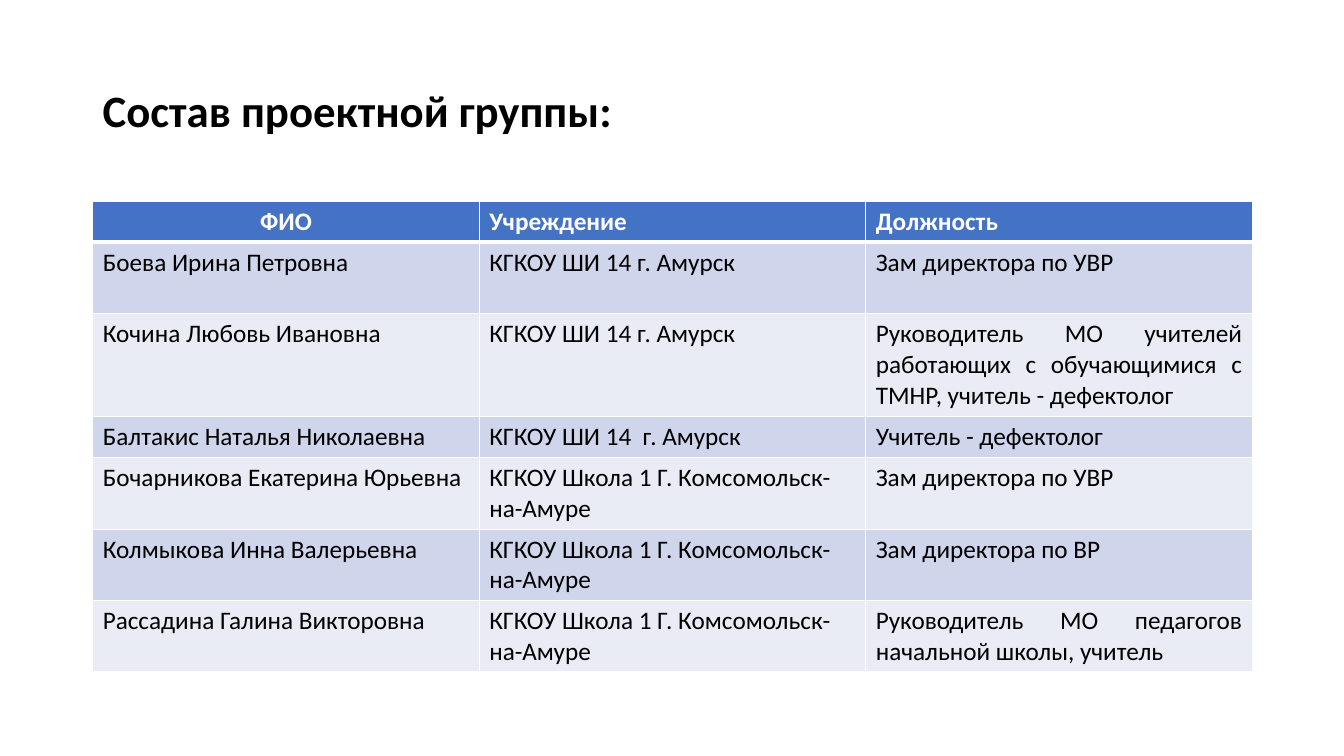
"""Build the slide that lists the members of the project group."""
from lxml.etree import SubElement
from pptx import Presentation
from pptx.dml.color import RGBColor
from pptx.enum.text import MSO_ANCHOR, PP_ALIGN
from pptx.oxml.ns import qn
from pptx.util import Inches, Pt

TITLE = "Состав проектной группы:"
HEADER = ("ФИО", "Учреждение", "Должность")
AMURSK = "КГКОУ ШИ 14 г. Амурск"
KOMSOMOLSK = "КГКОУ Школа 1 Г. Комсомольск-на-Амуре"
MEMBERS = [
    ("Боева Ирина Петровна", AMURSK, "Зам директора по УВР"),
    ("Кочина Любовь Ивановна", AMURSK,
     "Руководитель МО учителей работающих с обучающимися с ТМНР, учитель - дефектолог"),
    ("Балтакис Наталья Николаевна", "КГКОУ ШИ 14  г. Амурск", "Учитель - дефектолог"),
    ("Бочарникова Екатерина Юрьевна", KOMSOMOLSK, "Зам директора по УВР"),
    ("Колмыкова Инна Валерьевна", KOMSOMOLSK, "Зам директора по ВР"),
    ("Рассадина Галина Викторовна", KOMSOMOLSK,
     "Руководитель МО педагогов начальной школы, учитель"),
]
ROW_HEIGHTS = (0.4, 0.71, 1.02, 0.41, 0.71, 0.71, 0.7)
ALIGNMENTS = {(0, 0): PP_ALIGN.CENTER, (2, 2): PP_ALIGN.JUSTIFY, (6, 2): PP_ALIGN.JUSTIFY}
BLACK, WHITE, BLUE = "000000", "FFFFFF", "4472C4"
BANDS = ("E9EBF5", "CFD5EA")
LEFT, TABLE_TOP, TABLE_WIDTH = 0.92, 2, 11.5


def color(value):
    return RGBColor.from_string(value)


def write(tf, text, size, value, bold):
    tf.text = text
    p = tf.paragraphs[0]
    font = p.runs[0].font
    font.name, font.size, font.bold = "Calibri", Pt(size), bold
    font.color.rgb = color(value)
    return p


def add_borders(cell, header_below, is_header):
    widths = {"L": 1, "R": 1, "T": 3 if header_below else 1, "B": 3 if is_header else 1}
    for side, width in widths.items():
        line = SubElement(cell._tc.get_or_add_tcPr(), qn(f"a:ln{side}"), w=str(Pt(width)))
        fill = SubElement(line, qn("a:solidFill"))
        SubElement(fill, qn("a:srgbClr"), val=WHITE)


def add_title(s):
    tf = s.shapes.add_textbox(Inches(LEFT), Inches(0.4), Inches(10.39), Inches(1.45)).text_frame
    tf.word_wrap = True
    tf.vertical_anchor = MSO_ANCHOR.MIDDLE
    write(tf, TITLE, 32, BLACK, True).line_spacing = 0.9


def add_members(s):
    rows = [HEADER, *MEMBERS]
    table = s.shapes.add_table(len(rows), len(HEADER), Inches(LEFT), Inches(TABLE_TOP),
                               Inches(TABLE_WIDTH), Inches(sum(ROW_HEIGHTS))).table
    for i, (texts, height) in enumerate(zip(rows, ROW_HEIGHTS)):
        table.rows[i].height = Inches(height)
        is_header = i == 0
        for j, text in enumerate(texts):
            cell = table.cell(i, j)
            add_borders(cell, i == 1, is_header)
            cell.fill.solid()
            cell.fill.fore_color.rgb = color(BLUE if is_header else BANDS[i % 2])
            p = write(cell.text_frame, text, 18, WHITE if is_header else BLACK, is_header)
            p.alignment = ALIGNMENTS.get((i, j))


def main():
    prs = Presentation()
    prs.slide_width, prs.slide_height = Inches(13.33), Inches(7.5)
    s = prs.slides.add_slide(prs.slide_layouts[6])
    add_title(s)
    add_members(s)
    prs.save("out.pptx")


if __name__ == "__main__":
    main()
